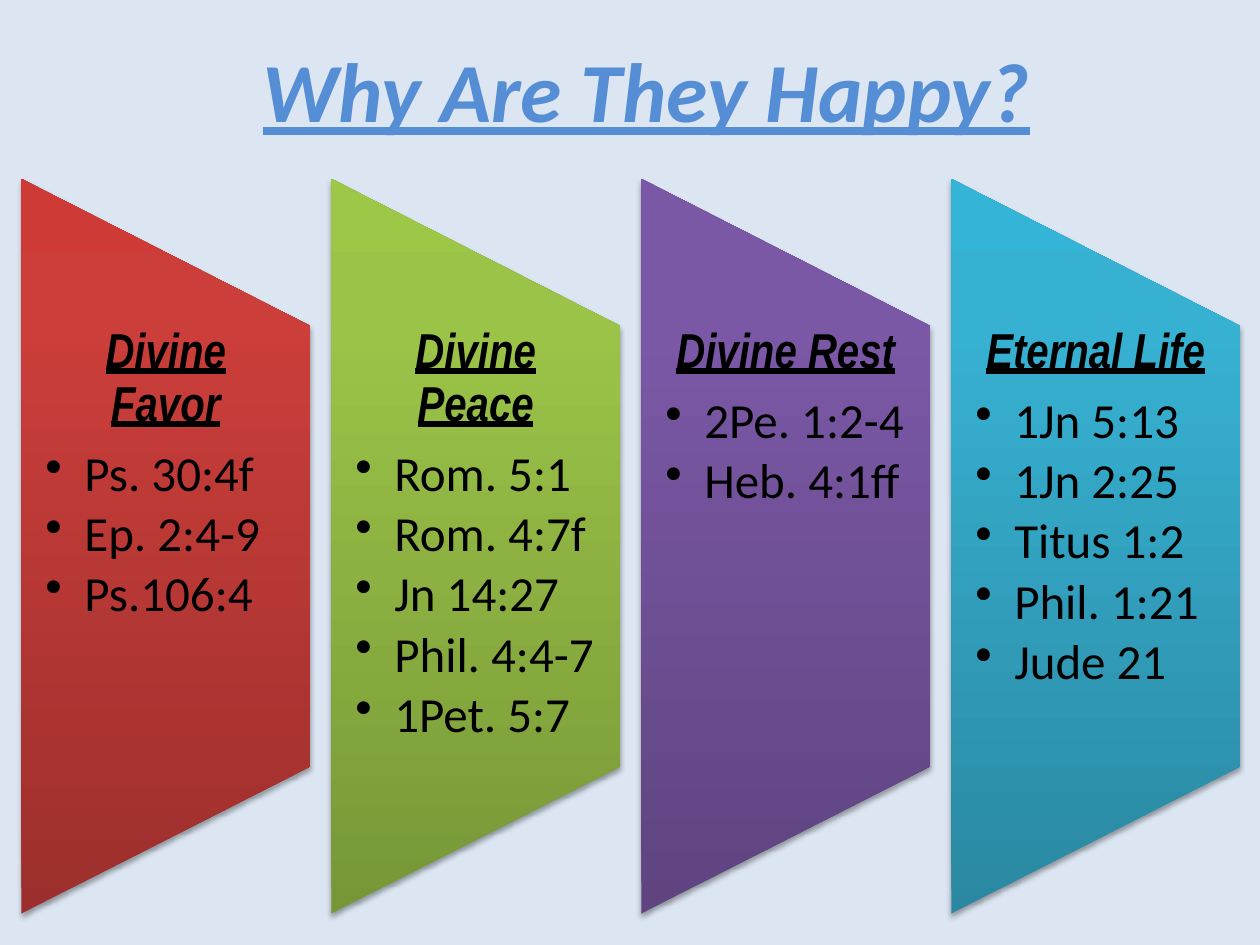
from lxml import etree
from pptx import Presentation, util as u
from pptx.dml.color import RGBColor
from pptx.enum import shapes, text
from pptx.oxml import parse_xml
from pptx.oxml.ns import nsdecls, qn

COLORS = {
    "background": "DCE6F2", "title": "558ED5", "text": "000000", "shadow": "000000",
    # gradient stops at 0, 80 and 100 percent, from the bottom up
    "red": ("9C2F2D", "CB3E3A", "CE3B37"),
    "green": ("779737", "9BC348", "9DC746"),
    "purple": ("5F4480", "7B58A6", "7C57A8"),
    "cyan": ("2A88A2", "37B1D2", "34B4D6"),
}
HEADING_FONT, BODY_FONT = "Arial Narrow", "Calibri"

COLUMNS = [
    ("red", "Divine Favor", ["Ps. 30:4f", "Ep. 2:4-9", "Ps.106:4"]),
    ("green", "Divine Peace",
     ["Rom. 5:1", "Rom. 4:7f", "Jn 14:27", "Phil. 4:4-7", "1Pet. 5:7"]),
    ("purple", "Divine Rest", ["2Pe. 1:2-4", "Heb. 4:1ff"]),
    ("cyan", "Eternal Life",
     ["1Jn 5:13", "1Jn 2:25", "Titus 1:2", "Phil. 1:21", "Jude 21"]),
]
# Column grid in inches
LEFT, PITCH, WIDTH = 0.17, 2.46, 2.29
TOP, HEIGHT = 1.42, 5.83
SLANT = HEIGHT / 5  # the preset tapers by a fifth at each end


def write(para, words, size=28, font=BODY_FONT, color="text", strong=False,
          align=None, spacing=None, after=None, bullet=False):
    """Fill a paragraph; strong is bold, italic and underlined, after is a percentage."""
    if align is not None:
        para.alignment = align
    if spacing:
        para.line_spacing = spacing
    props = para._p.get_or_add_pPr()
    if after:
        space = etree.SubElement(props, qn("a:spcAft"))
        etree.SubElement(space, qn("a:spcPct"), val=str(after * 1000))
    if bullet:
        para.level = 1
        indent = u.Inches(0.31)
        props.set("marL", str(indent))
        props.set("indent", str(-indent))
        etree.SubElement(props, qn("a:buChar"), char="•")
    span = para.add_run()
    span.text = words
    span.font.size = u.Pt(size)
    span.font.name = font
    span.font.bold = span.font.italic = span.font.underline = strong
    span.font.color.rgb = RGBColor.from_string(COLORS[color])


class SlideBuilder:
    def __init__(self, deck):
        self.slide = deck.slides.add_slide(deck.slide_layouts[6])
        fill = self.slide.background.fill
        fill.solid()
        fill.fore_color.rgb = RGBColor.from_string(COLORS["background"])

    def text_box(self, left, top, width, height):
        box = self.slide.shapes.add_textbox(*map(u.Inches, (left, top, width, height)))
        box.text_frame.word_wrap = True
        return box.text_frame

    def title(self, words):
        frame = self.text_box(1.67, 0.26, 6.92, 0.91)
        frame.auto_size = text.MSO_AUTO_SIZE.SHAPE_TO_FIT_TEXT
        write(frame.paragraphs[0], words, size=48, color="title", strong=True,
              align=text.PP_ALIGN.CENTER)

    def panel(self, column, color):
        """Draw a tapered panel, a flat shape turned on its side."""
        left = LEFT + column * PITCH + (WIDTH - HEIGHT) / 2
        top = TOP + (HEIGHT - WIDTH) / 2
        panel = self.slide.shapes.add_shape(
            shapes.MSO_SHAPE.FLOWCHART_MANUAL_OPERATION,
            *map(u.Inches, (left, top, HEIGHT, WIDTH)))
        panel.rotation = 270
        panel.line.fill.background()
        stops = "".join(
            f'<a:gs pos="{share * 1000}"><a:srgbClr val="{value}"/></a:gs>'
            for share, value in zip((0, 80, 100), COLORS[color]))
        props = panel._element.spPr
        props.find(qn("a:prstGeom")).addnext(parse_xml(
            f'<a:gradFill {nsdecls("a")} rotWithShape="0"><a:gsLst>{stops}</a:gsLst>'
            '<a:lin ang="16200000" scaled="0"/></a:gradFill>'))
        props.append(parse_xml(
            f'<a:effectLst {nsdecls("a")}><a:outerShdw blurRad="{u.Pt(3.1)}" '
            f'dist="{u.Pt(1.8)}" dir="5400000" rotWithShape="0">'
            f'<a:srgbClr val="{COLORS["shadow"]}"><a:alpha val="35000"/></a:srgbClr>'
            '</a:outerShdw></a:effectLst>'))

    def references(self, column, heading, verses):
        frame = self.text_box(LEFT + column * PITCH, TOP + SLANT, WIDTH, HEIGHT - 2 * SLANT)
        frame.margin_left = frame.margin_right = u.Inches(0.19)
        frame.margin_top = frame.margin_bottom = 0
        write(frame.paragraphs[0], heading, font=HEADING_FONT, strong=True,
              align=text.PP_ALIGN.CENTER, spacing=0.9, after=35)
        for verse in verses:
            write(frame.add_paragraph(), verse, spacing=0.9, after=15, bullet=True)


def main():
    deck = Presentation()
    deck.slide_width, deck.slide_height = u.Inches(10), u.Inches(7.5)
    builder = SlideBuilder(deck)
    for column, (color, heading, verses) in enumerate(COLUMNS):
        builder.panel(column, color)
        builder.references(column, heading, verses)
    builder.title("Why Are They Happy?")
    deck.save("out.pptx")


if __name__ == "__main__":
    main()
